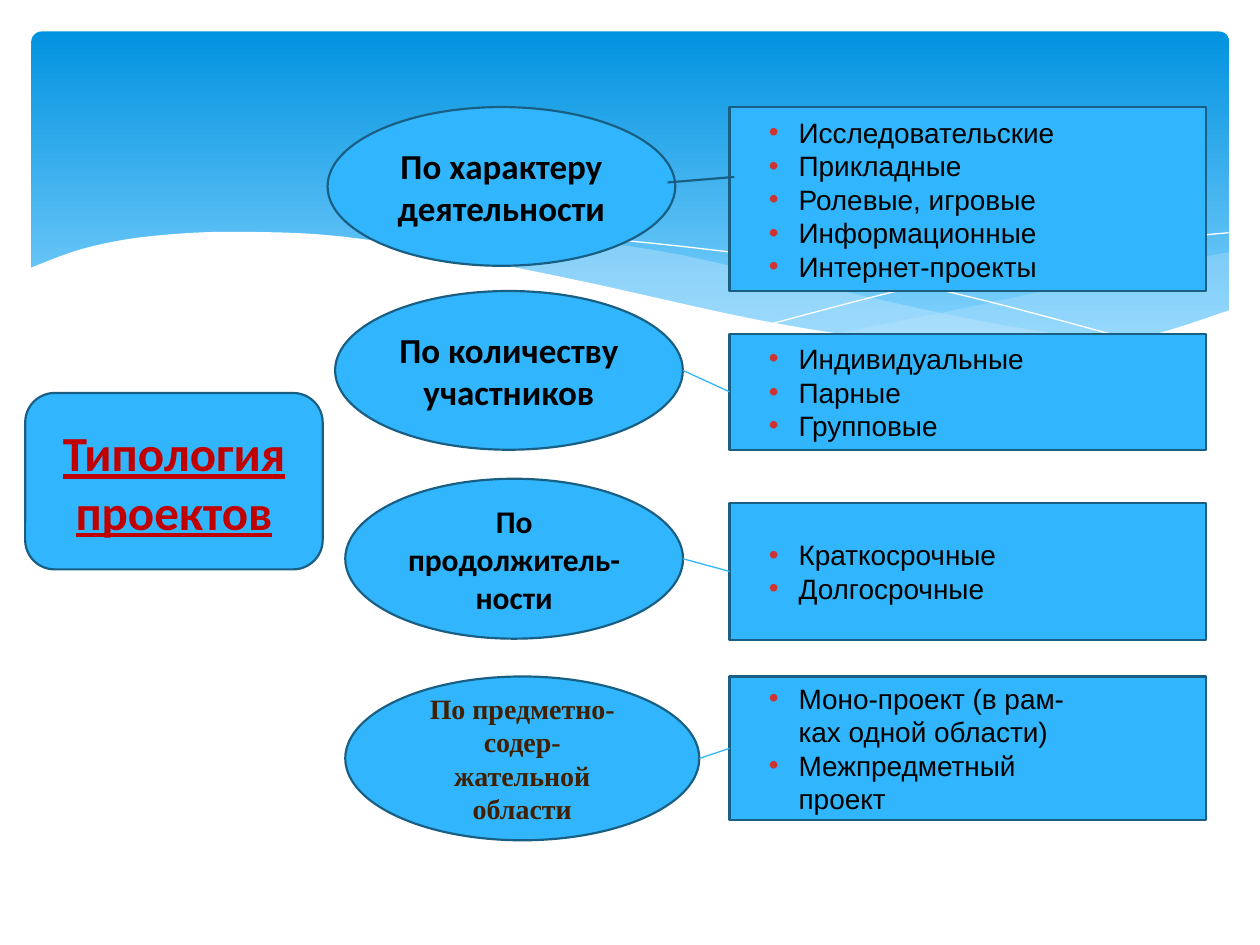
from dataclasses import dataclass

from lxml.etree import SubElement
from pptx import Presentation
from pptx.dml.color import RGBColor
from pptx.enum.shapes import MSO_CONNECTOR, MSO_SHAPE
from pptx.enum.text import MSO_ANCHOR, PP_ALIGN
from pptx.oxml.ns import qn
from pptx.util import Pt


@dataclass(frozen=True)
class Theme:
    sky: str = "0293E0"
    haze: str = "83D3FE"
    mist: str = "C6E7FC"
    white: str = "FFFFFF"
    fill: str = "31B6FD"
    edge: str = "195F84"
    black: str = "000000"
    brown: str = "402000"
    red: str = "C00000"
    bullet: str = "CD3333"
    head: int = 28
    large: int = 20
    medium: int = 18
    small: int = 16
    sans: str = "Calibri"
    body: str = "Arial"
    serif: str = "Times New Roman"


def curve(knots, steps=6):
    """Return points of a Catmull-Rom curve that runs through the knots."""
    ends = [knots[0], *knots, knots[-1]]
    points = [knots[0]]
    for a, b, c, d in zip(ends, ends[1:], ends[2:], ends[3:]):
        for step in range(1, steps + 1):
            t = step / steps
            points.append(tuple(
                q + t * (r - p + t * (2 * p - 5 * q + 4 * r - s
                                      + t * (3 * (q - r) + s - p))) / 2
                for p, q, r, s in zip(a, b, c, d)))
    return points


class Deck:
    def __init__(self, theme):
        self.theme = theme
        self.show = Presentation()
        self.show.slide_width, self.show.slide_height = Pt(720), Pt(540)
        self.slide = self.show.slides.add_slide(self.show.slide_layouts[6])
        self.shapes = self.slide.shapes

    def banner(self, box):
        shape = self.shapes.add_shape(MSO_SHAPE.ROUNDED_RECTANGLE, *map(Pt, box))
        shape.adjustments[0] = 0.03
        shape.shadow.inherit = False
        shape.line.fill.background()
        shape.fill.gradient()
        shape.fill.gradient_angle = 270
        stops = ((0, self.theme.sky), (0.9, self.theme.haze))
        for stop, (place, color) in zip(shape.fill.gradient_stops, stops):
            stop.position = place
            stop.color.rgb = RGBColor.from_string(color)

    def wave(self, points, fill=None, alpha=100):
        """Draw a filled outline, or a white hairline when no fill is given."""
        spots = [(Pt(x), Pt(y)) for x, y in points]
        pen = self.shapes.build_freeform(*spots[0], scale=1.0)
        pen.add_line_segments(spots[1:], close=fill is not None)
        shape = pen.convert_to_shape()
        shape.shadow.inherit = False
        if fill is None:
            shape.fill.background()
            shape.line.color.rgb = RGBColor.from_string(self.theme.white)
            shape.line.width = Pt(0)
            return
        shape.line.fill.background()
        shape.fill.solid()
        shape.fill.fore_color.rgb = RGBColor.from_string(fill)
        if alpha < 100:
            color = shape.fill._xPr.find(f".//{qn('a:srgbClr')}")
            SubElement(color, qn("a:alpha"), val=str(alpha * 1000))

    def box(self, kind, box, lines, style, color, bullets=False):
        shape = self.shapes.add_shape(kind, *map(Pt, box))
        shape.shadow.inherit = False
        shape.fill.solid()
        shape.fill.fore_color.rgb = RGBColor.from_string(self.theme.fill)
        shape.line.color.rgb = RGBColor.from_string(self.theme.edge)
        shape.line.width = Pt(1.25)
        frame = shape.text_frame
        frame.word_wrap = True
        frame.vertical_anchor = MSO_ANCHOR.MIDDLE
        for index, line in enumerate(lines):
            para = frame.add_paragraph() if index else frame.paragraphs[0]
            para.text = line
            para.alignment = PP_ALIGN.LEFT if bullets else PP_ALIGN.CENTER
            for run in para.runs:
                for name, value in style.items():
                    setattr(run.font, name, value)
                run.font.color.rgb = RGBColor.from_string(color)
            if bullets:
                self.bullet(para)
        return shape

    def bullet(self, para):
        props = para._p.get_or_add_pPr()
        props.set("marL", str(Pt(32.4)))
        props.set("indent", str(-Pt(17)))
        tint = SubElement(props, qn("a:buClr"))
        SubElement(tint, qn("a:srgbClr"), val=self.theme.bullet)
        SubElement(props, qn("a:buFont"), typeface=self.theme.body)
        SubElement(props, qn("a:buChar"), char="•")

    def link(self, card, oval):
        """Join the left side of a card to the right end of an oval."""
        line = self.shapes.add_connector(
            MSO_CONNECTOR.STRAIGHT, card.left, card.top + card.height // 2,
            oval.left + oval.width, oval.top + oval.height // 2)
        line.begin_connect(card, 1)
        line.line.color.rgb = RGBColor.from_string(self.theme.fill)
        line.line.width = Pt(0.75)
        SubElement(line._element.spPr, qn("a:effectLst"))


def backdrop(deck):
    theme = deck.theme
    deck.banner((18, 18, 684.5, 194.5))
    deck.wave(
        curve([(702.5, 144), (642, 156), (561, 174), (476, 191)])
        + curve([(476, 191), (536, 197), (586, 200), (641, 197),
                 (681, 187), (702.5, 178)]), theme.mist, 29)
    deck.wave(
        curve([(643, 196.5), (558, 183), (453, 160), (380, 144),
               (318, 136), (260, 133), (206, 137.5)])
        + curve([(206, 137.5), (261, 146), (323, 160), (433, 184),
                 (511, 196), (589, 200), (643, 196.5)]), theme.mist, 40)
    deck.wave(curve([(222.5, 140), (270, 135), (324, 135), (400, 142),
                     (479, 153), (547, 168), (598, 181), (653, 196)]))
    deck.wave(curve([(441, 185), (518, 165), (602, 147), (665, 137),
                     (702, 133)]))
    deck.wave(
        curve([(16.5, 153.5), (48, 142), (86, 135), (139, 132.5), (210, 137),
               (322, 158.5), (434, 183), (510, 194.5), (582, 199),
               (647, 194), (703.5, 177)])
        + [(703.5, 237), (16.5, 237)], theme.white)


def main():
    theme = Theme()
    deck = Deck(theme)
    backdrop(deck)

    bold = {"name": theme.sans, "size": Pt(theme.large), "bold": True}
    plain = {"name": theme.body, "size": Pt(theme.small), "bold": False}
    deck.box(MSO_SHAPE.ROUNDED_RECTANGLE, (14.4, 224.6, 170, 100.8),
             ["Типология проектов"],
             bold | {"size": Pt(theme.head), "underline": True}, theme.red)

    left, width = 416.9, 272.2
    groups = [
        ("По характеру деятельности", (187.2, 61.2, 198.7, 90.7),
         bold, theme.black, (61.2, 105.1),
         ["Исследовательские", "Прикладные", "Ролевые, игровые",
          "Информационные", "Интернет-проекты"]),
        ("По количеству участников", (191.5, 166.3, 198.7, 90.7),
         bold, theme.black, (190.8, 66.2),
         ["Индивидуальные", "Парные", "Групповые"]),
        ("По продолжитель-ности", (197.3, 273.6, 193, 91.4),
         bold | {"size": Pt(theme.medium)}, theme.black, (287.3, 78.5),
         ["Краткосрочные", "Долгосрочные"]),
        ("По предметно-содер-\nжательной области", (197.3, 386.6, 202.3, 93.6),
         bold | {"name": theme.serif, "size": Pt(theme.small)}, theme.brown,
         (386.6, 82.1),
         ["Моно-проект (в рам-\nках одной области)",
          "Межпредметный\nпроект"]),
    ]
    for index, (label, spot, style, color, (top, height), items) in enumerate(groups):
        oval = deck.box(MSO_SHAPE.OVAL, spot, [label], style, color)
        kind = MSO_SHAPE.RECTANGLE if index else MSO_SHAPE.LINE_CALLOUT_1
        card = deck.box(kind, (left, top, width, height), items,
                        plain, theme.black, bullets=True)
        if index:
            deck.link(card, oval)
        else:
            for place, value in enumerate((0.38, 0.01, 0.41, -0.13)):
                card.adjustments[place] = value

    deck.show.save("out.pptx")


if __name__ == "__main__":
    main()
